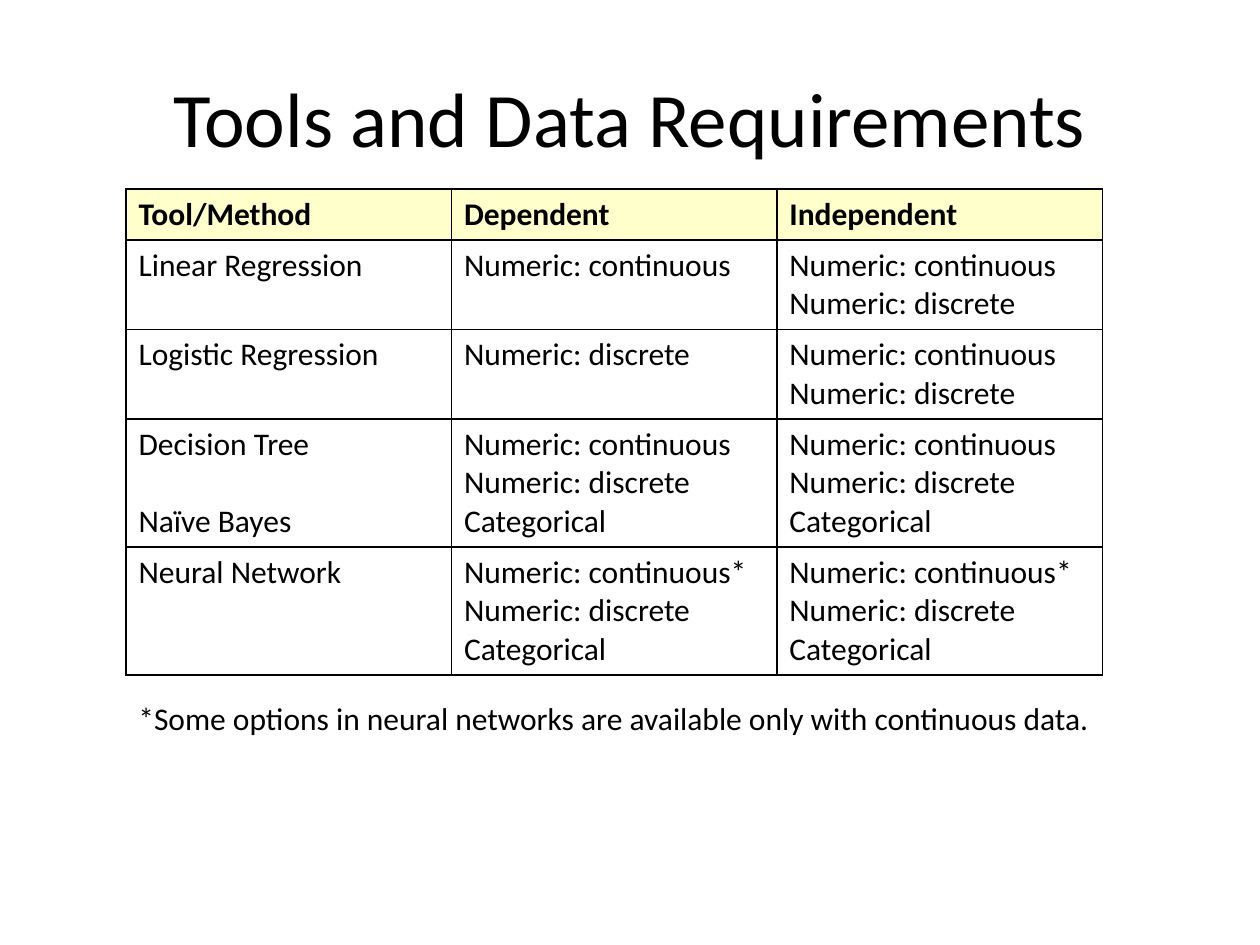
from lxml.etree import SubElement
from pptx import Presentation
from pptx.dml.color import RGBColor
from pptx.enum.text import MSO_ANCHOR, PP_ALIGN
from pptx.oxml.ns import qn
from pptx.util import Cm, Pt

COLORS = {"text": "000000", "border": "000000", "header": "FFFFCC"}
FONT = "Calibri"
BODY_SIZE = 18
LINE_PITCH = 22
CONTINUOUS, DISCRETE, CATEGORICAL = "Numeric: continuous", "Numeric: discrete", "Categorical"
NUMERIC = [CONTINUOUS, DISCRETE]
ANY_DATA = NUMERIC + [CATEGORICAL]
ANY_DATA_STARRED = [CONTINUOUS + "*", DISCRETE, CATEGORICAL]
REQUIREMENTS = [
    (["Tool/Method"], ["Dependent"], ["Independent"]),
    (["Linear Regression"], [CONTINUOUS], NUMERIC),
    (["Logistic Regression"], [DISCRETE], NUMERIC),
    (["Decision Tree", "Naïve Bayes"], ANY_DATA, ANY_DATA),
    (["Neural Network"], ANY_DATA_STARRED, ANY_DATA_STARRED),
]


def write_lines(frame, lines, size=BODY_SIZE, bold=False, align=PP_ALIGN.LEFT):
    """Fill a text frame with one formatted paragraph per line."""
    frame.text = "\n".join(lines)
    for paragraph in frame.paragraphs:
        paragraph.alignment = align
        font = paragraph.font
        font.name, font.size, font.bold = FONT, Pt(size), bold
        font.color.rgb = RGBColor.from_string(COLORS["text"])


def add_borders(cell):
    """Draw a thin solid line on all four sides of a cell."""
    properties = cell._tc.get_or_add_tcPr()
    for position, side in enumerate(("lnL", "lnR", "lnT", "lnB")):
        line = SubElement(properties, qn(f"a:{side}"), w=str(Pt(1)))
        fill = SubElement(line, qn("a:solidFill"))
        SubElement(fill, qn("a:srgbClr"), val=COLORS["border"])
        properties.insert(position, line)


def add_title(slide, text):
    """Place and format the title placeholder."""
    title = slide.shapes.title
    title.left, title.top, title.width, title.height = Cm(1.27), Cm(0.76), Cm(22.86), Cm(3.18)
    title.text_frame.vertical_anchor = MSO_ANCHOR.MIDDLE
    write_lines(title.text_frame, [text], size=44, align=PP_ALIGN.CENTER)


def add_requirements(slide, requirements):
    """Add the bordered table and return it."""
    heights = [Cm(0.26 + 0.77 * max(map(len, row))) for row in requirements]
    table = slide.shapes.add_table(
        len(requirements), len(requirements[0]), Cm(2.54), Cm(3.81), Cm(19.68), sum(heights)
    ).table
    table.horz_banding = False
    for row_index, row in enumerate(requirements):
        is_header = row_index == 0
        table.rows[row_index].height = heights[row_index]
        for column_index, lines in enumerate(row):
            cell = table.cell(row_index, column_index)
            write_lines(cell.text_frame, lines, bold=is_header)
            if is_header:
                cell.fill.solid()
                cell.fill.fore_color.rgb = RGBColor.from_string(COLORS["header"])
            else:
                cell.fill.background()
            add_borders(cell)
    return table


def add_footnote(slide, text):
    """Add the one-line remark below the table."""
    frame = slide.shapes.add_textbox(Cm(2.54), Cm(13.97), Cm(19.76), Cm(1.02)).text_frame
    frame.word_wrap = False
    write_lines(frame, [text])


def main():
    """Build and save the slide."""
    deck = Presentation()
    deck.slide_width, deck.slide_height = Cm(25.4), Cm(19.05)
    slide = deck.slides.add_slide(deck.slide_layouts[5])
    add_title(slide, "Tools and Data Requirements")
    table = add_requirements(slide, REQUIREMENTS)
    naive_bayes = table.cell(3, 0).text_frame.paragraphs[1]
    naive_bayes.space_before = Pt(LINE_PITCH)
    add_footnote(
        slide, "*Some options in neural networks are available only with continuous data."
    )
    deck.save("out.pptx")


if __name__ == "__main__":
    main()
